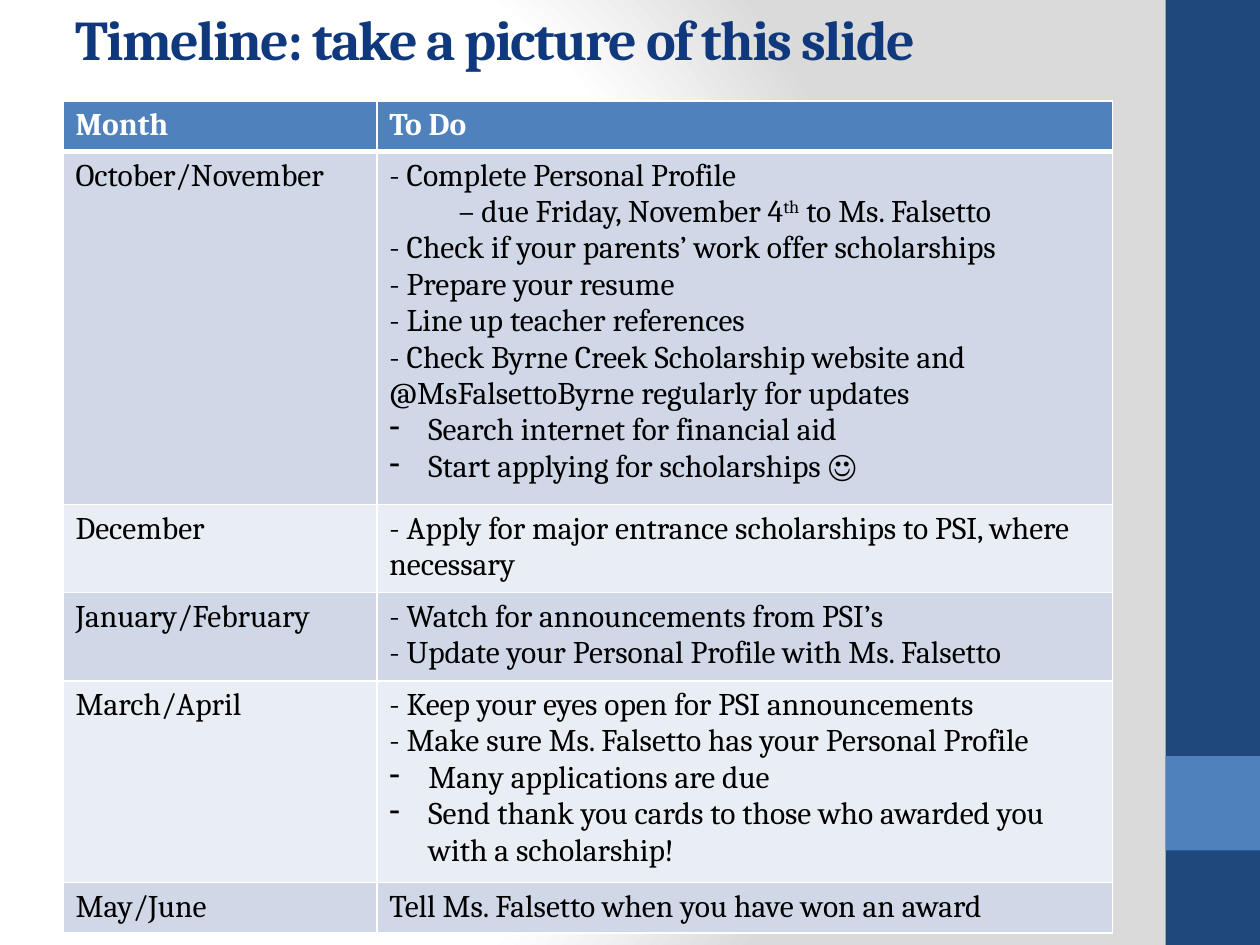
from dataclasses import dataclass
from typing import NamedTuple

import pptx
import pptx.dml.color
import pptx.enum.shapes
import pptx.enum.text
import pptx.oxml
import pptx.oxml.ns
import pptx.util

SLIDE_WIDTH, SLIDE_HEIGHT = 10, 7.5
SUPERSCRIPT_MARK = "^"


@dataclass(frozen=True)
class Theme:
    font: str = "Cambria"
    title_size: int = 32
    body_size: int = 18
    title: str = "0F387D"
    heading: str = "FFFFFF"
    body: str = "000000"
    sidebar: str = "1F497D"
    accent: str = "4F81BD"
    bands: tuple[str, str] = ("D0D8E8", "E9EDF4")
    border: str = "FFFFFF"
    background: str = "FFFFFF"
    background_edge: str = "DADADA"


class Box(NamedTuple):
    """A place on the slide, in shares of its width and height."""
    left: float
    top: float
    width: float
    height: float

    def lengths(self) -> list[int]:
        sides = (SLIDE_WIDTH, SLIDE_HEIGHT, SLIDE_WIDTH, SLIDE_HEIGHT)
        return [pptx.util.Inches(share * side) for share, side in zip(self, sides)]


class Task(NamedTuple):
    text: str
    bulleted: bool = False
    indent: float = 0


class Period(NamedTuple):
    months: str
    tasks: list[Task]
    lines: int


THEME = Theme()
TITLE = Box(0.05, -0.01, 0.833, 0.1)
SIDEBAR = Box(0.925, 0, 0.075, 1)
SIDEBAR_ACCENT = Box(0.925, 0.8, 0.075, 0.1)
COLUMN_SHARES = (0.299, 0.701)
LINE_HEIGHT, CELL_PADDING, MIN_ROW = 0.29, 0.1, 0.4
BULLET_INDENT = 0.31

HEADINGS = ("Month", "To Do")
PERIODS = [
    Period("October/November", [
        Task("- Complete Personal Profile"),
        Task("– due Friday, November 4^th^ to Ms. Falsetto", indent=0.55),
        Task("- Check if your parents’ work offer scholarships"),
        Task("- Prepare your resume"),
        Task("- Line up teacher references"),
        Task("- Check Byrne Creek Scholarship website and "
             "@MsFalsettoByrne regularly for updates"),
        Task("Search internet for financial aid", bulleted=True),
        Task("Start applying for scholarships ☺", bulleted=True),
    ], lines=9),
    Period("December", [
        Task("- Apply for major entrance scholarships to PSI, where necessary"),
    ], lines=2),
    Period("January/February", [
        Task("- Watch for announcements from PSI’s"),
        Task("- Update your Personal Profile with Ms. Falsetto"),
    ], lines=2),
    Period("March/April", [
        Task("- Keep your eyes open for PSI announcements"),
        Task("- Make sure Ms. Falsetto has your Personal Profile"),
        Task("Many applications are due", bulleted=True),
        Task("Send thank you cards to those who awarded you with a scholarship!",
             bulleted=True),
    ], lines=5),
    Period("May/June", [Task("Tell Ms. Falsetto when you have won an award")], lines=1),
]


def rgb(color: str) -> pptx.dml.color.RGBColor:
    return pptx.dml.color.RGBColor.from_string(color)


def style(paragraph, size: int, color: str, bold: bool = False) -> None:
    font = paragraph.font
    font.name, font.size, font.bold = THEME.font, pptx.util.Pt(size), bold
    font.color.rgb = rgb(color)


def paint_background(slide) -> None:
    stops = ((0, THEME.background), (75, THEME.background), (100, THEME.background_edge))
    stop_xml = "".join(
        f'<a:gs pos="{share * 1000}"><a:srgbClr val="{color}"/></a:gs>'
        for share, color in stops)
    slide.element.cSld.insert(0, pptx.oxml.parse_xml(
        f'<p:bg {pptx.oxml.ns.nsdecls("p", "a")}><p:bgPr><a:gradFill rotWithShape="1">'
        f'<a:gsLst>{stop_xml}</a:gsLst><a:path path="circle">'
        '<a:fillToRect l="20000" t="50000" r="100000" b="50000"/></a:path>'
        '</a:gradFill><a:effectLst/></p:bgPr></p:bg>'))


def add_panel(slide, box: Box, color: str) -> None:
    panel = slide.shapes.add_shape(
        pptx.enum.shapes.MSO_SHAPE.RECTANGLE, *box.lengths())
    panel.shadow.inherit = False
    panel.fill.solid()
    panel.fill.fore_color.rgb = rgb(color)
    panel.line.fill.background()


def add_title(slide, text: str) -> None:
    frame = slide.shapes.add_textbox(*TITLE.lengths()).text_frame
    frame.word_wrap = True
    frame.vertical_anchor = pptx.enum.text.MSO_ANCHOR.MIDDLE
    paragraph = frame.paragraphs[0]
    run = paragraph.add_run()
    run.text = text
    style(paragraph, THEME.title_size, THEME.title, bold=True)
    run._r.get_or_add_rPr().set("spc", "-100")


def write_tasks(cell, tasks: list[Task], color: str, bold: bool = False) -> None:
    frame = cell.text_frame
    for number, task in enumerate(tasks):
        paragraph = frame.add_paragraph() if number else frame.paragraphs[0]
        style(paragraph, THEME.body_size, color, bold)
        for part, text in enumerate(task.text.split(SUPERSCRIPT_MARK)):
            run = paragraph.add_run()
            run.text = text
            if part % 2:
                run._r.get_or_add_rPr().set("baseline", "30000")
        indent = BULLET_INDENT if task.bulleted else task.indent
        if indent:
            properties = paragraph._p.get_or_add_pPr()
            properties.set("marL", str(pptx.util.Inches(indent)))
        if task.bulleted:
            properties.set("indent", str(-pptx.util.Inches(indent)))
            properties.insert(0, pptx.oxml.parse_xml(
                f'<a:buChar {pptx.oxml.ns.nsdecls("a")} char="-"/>'))


def finish_cell(cell, fill: str, top: int = 1, bottom: int = 1) -> None:
    """Fill the cell and border it; top and bottom widths are in points."""
    properties = cell._tc.get_or_add_tcPr()
    for side, width in (("L", 1), ("R", 1), ("T", top), ("B", bottom)):
        properties.append(pptx.oxml.parse_xml(
            f'<a:ln{side} {pptx.oxml.ns.nsdecls("a")} w="{pptx.util.Pt(width)}">'
            f'<a:solidFill><a:srgbClr val="{THEME.border}"/></a:solidFill></a:ln{side}>'))
    cell.fill.solid()
    cell.fill.fore_color.rgb = rgb(fill)


def add_timeline(slide) -> None:
    heights = [max(MIN_ROW, CELL_PADDING + LINE_HEIGHT * lines)
               for lines in (1, *(period.lines for period in PERIODS))]
    box = Box(0.05, 0.107, 0.833, sum(heights) / SLIDE_HEIGHT)
    table = slide.shapes.add_table(
        len(heights), len(HEADINGS), *box.lengths()).table
    table.horz_banding = False
    for column, share in zip(table.columns, COLUMN_SHARES):
        column.width = pptx.util.Inches(box.width * SLIDE_WIDTH * share)
    for row, height in zip(table.rows, heights):
        row.height = pptx.util.Inches(height)

    for column, heading in enumerate(HEADINGS):
        cell = table.cell(0, column)
        write_tasks(cell, [Task(heading)], THEME.heading, bold=True)
        finish_cell(cell, THEME.accent, bottom=3)
    for row, period in enumerate(PERIODS, start=1):
        for column, tasks in enumerate(([Task(period.months)], period.tasks)):
            cell = table.cell(row, column)
            write_tasks(cell, tasks, THEME.body)
            finish_cell(cell, THEME.bands[(row - 1) % 2], top=3 if row == 1 else 1)


def main() -> None:
    deck = pptx.Presentation()
    deck.slide_width = pptx.util.Inches(SLIDE_WIDTH)
    deck.slide_height = pptx.util.Inches(SLIDE_HEIGHT)
    slide = deck.slides.add_slide(deck.slide_layouts[6])
    paint_background(slide)
    add_panel(slide, SIDEBAR, THEME.sidebar)
    add_panel(slide, SIDEBAR_ACCENT, THEME.accent)
    add_title(slide, "Timeline: take a picture of this slide")
    add_timeline(slide)
    deck.save("out.pptx")


if __name__ == "__main__":
    main()
